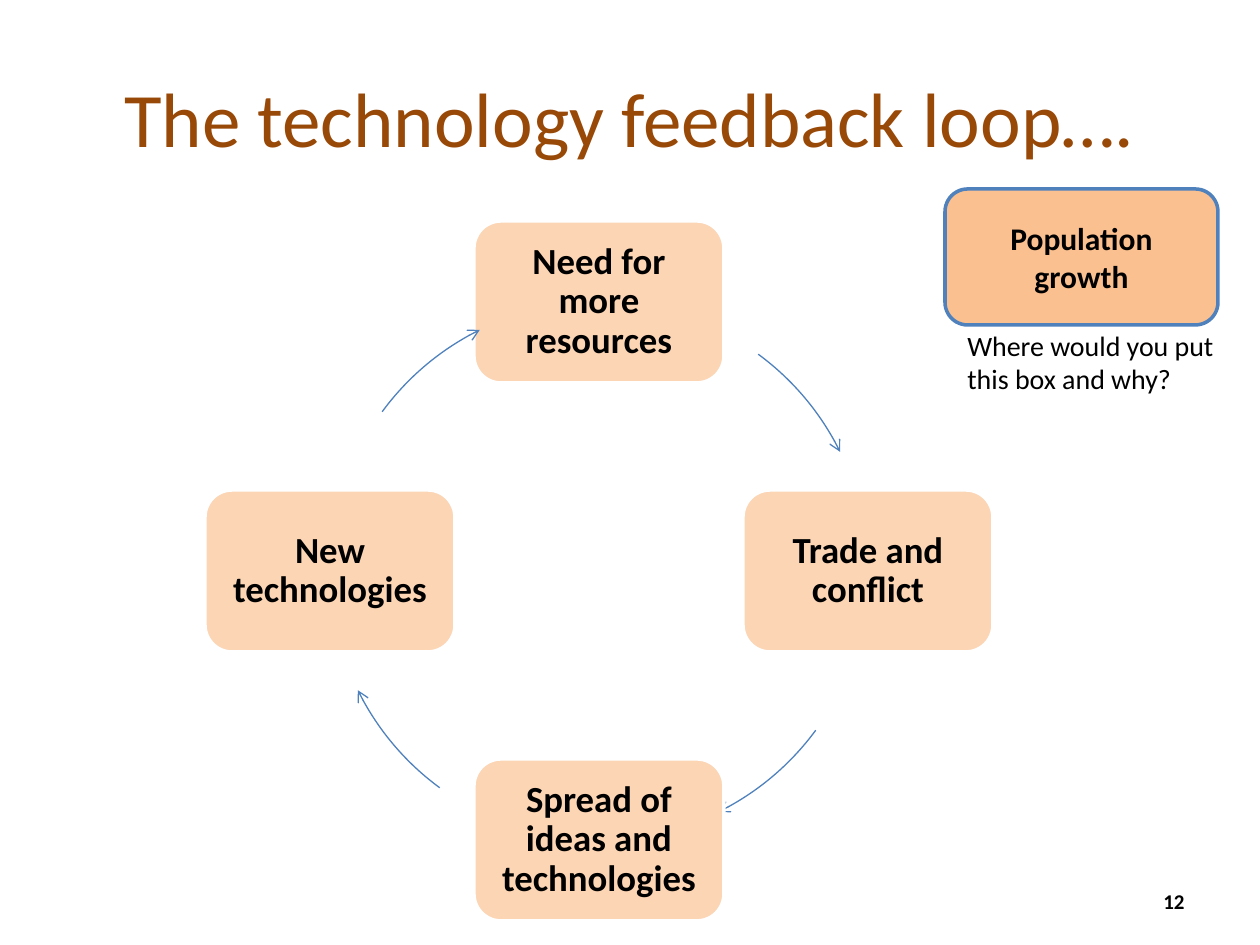
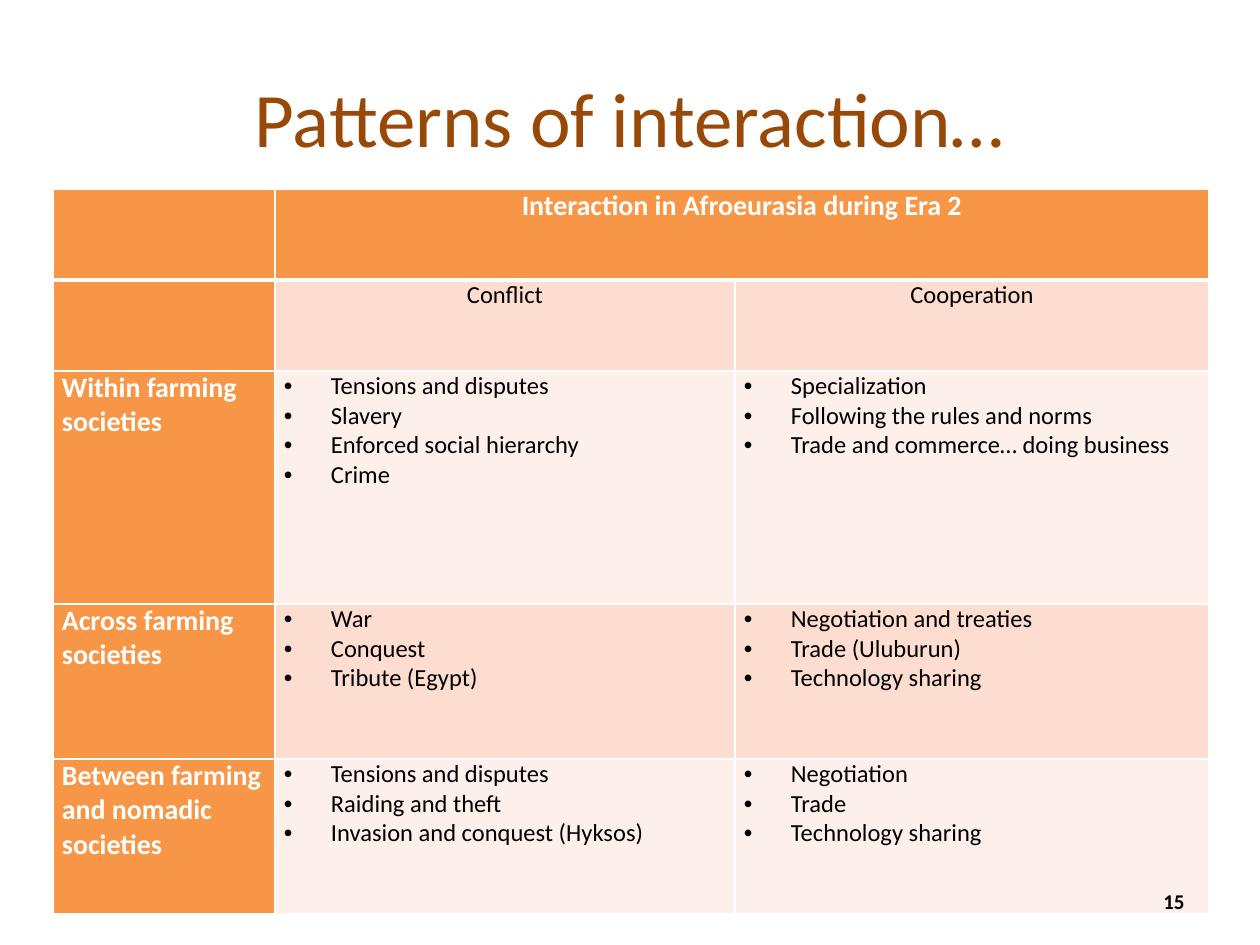
from dataclasses import dataclass

from lxml.etree import SubElement
from pptx import Presentation
from pptx.dml.color import RGBColor
from pptx.enum.shapes import MSO_SHAPE
from pptx.enum.text import MSO_ANCHOR, PP_ALIGN
from pptx.oxml.ns import qn
from pptx.util import Emu, Pt

SCALE = 914400 / 126  # EMU in one px


@dataclass(frozen=True)
class Theme:
    font: str = "Calibri"
    title: str = "984807"
    ink: str = "000000"
    white: str = "FFFFFF"
    blue: str = "4F81BD"
    peach: str = "FCD5B5"
    amber: str = "FAC090"
    head: str = "F79646"
    bands: tuple = ("FCDDCF", "FDEFE9")
    huge: int = 44
    step: int = 21
    large: int = 18
    label: int = 16
    body: int = 14
    small: int = 12


T = Theme()
LEFT, MID, RIGHT = PP_ALIGN.LEFT, PP_ALIGN.CENTER, PP_ALIGN.RIGHT


def px(n):
    return Emu(round(n * SCALE))


def span(box):
    return [px(n) for n in box]


def apply(item, form):
    for name, value in form.items():
        setattr(item, name, value)


# Text

def dot(par):
    """Give a paragraph a bullet with a hanging indent."""
    props = par._p.get_or_add_pPr()
    props.set("marL", str(px(47)))
    props.set("indent", str(-px(47)))
    SubElement(props, qn("a:buFont"), typeface="Arial")
    SubElement(props, qn("a:buChar"), char="•")


def write(frame, lines, size, color=T.ink, bold=False, align=LEFT,
          bullet=False, space=None):
    for i, line in enumerate(lines):
        par = frame.add_paragraph() if i else frame.paragraphs[0]
        apply(par, {"alignment": align, "line_spacing": space})
        if bullet:
            dot(par)
        run = par.add_run()
        run.text = line
        apply(run.font, {"name": T.font, "size": Pt(size), "bold": bold})
        run.font.color.rgb = RGBColor.from_string(color)


def note(slide, box, line, size, anchor=MSO_ANCHOR.MIDDLE, **form):
    frame = slide.shapes.add_textbox(*span(box)).text_frame
    apply(frame, {"word_wrap": True, "vertical_anchor": anchor})
    write(frame, [line], size, **form)


def frame_slide(deck, title):
    slide = deck.slides.add_slide(deck.slide_layouts[6])
    note(slide, (63, 38, 1134, 157), title, T.huge, color=T.title, align=MID)
    return slide


def number(slide, value):
    note(slide, (903, 876, 294, 50), value, T.small, bold=True, align=RIGHT)


# Feedback loop

def card(slide, box, line, size, fill, edge, pad=13, space=None):
    shape = slide.shapes.add_shape(MSO_SHAPE.ROUNDED_RECTANGLE, *span(box))
    shape.shadow.inherit = False
    shape.fill.solid()
    shape.fill.fore_color.rgb = RGBColor.from_string(fill)
    shape.line.color.rgb = RGBColor.from_string(edge)
    shape.line.width = Pt(2)
    frame = shape.text_frame
    apply(frame, {"word_wrap": True, "vertical_anchor": MSO_ANCHOR.MIDDLE,
                  "margin_left": px(pad), "margin_right": px(pad)})
    write(frame, [line], size, bold=True, align=MID, space=space)


def arc(slide, box, start, end):
    """Draw a clockwise arrow; angles are in degrees from the right."""
    shape = slide.shapes.add_shape(MSO_SHAPE.ARC, *span(box))
    shape.shadow.inherit = False
    shape.fill.background()
    for i, angle in enumerate((start, end)):
        shape.adjustments[i] = angle % 360 * 0.6
    shape.line.color.rgb = RGBColor.from_string(T.blue)
    shape.line.width = Pt(0.75)
    SubElement(shape.line._get_or_add_ln(), qn("a:tailEnd"), type="arrow")


def cycle(slide, box, steps):
    """Set four steps on the sides of a square box, clockwise from the top."""
    left, top, size = box
    half, wide, high = size / 2, 250, 162
    sides = ((0, -1), (1, 0), (0, 1), (-1, 0))
    for i, (step, (dx, dy)) in enumerate(zip(steps, sides)):
        x = left + half * (1 + dx) - wide / 2
        y = top + half * (1 + dy) - high / 2
        card(slide, (x, y, wide, high), step, T.step, T.peach, T.white,
             pad=11, space=0.9)
        turn = 270 + 90 * i
        arc(slide, (left, top, size, size), turn + 36.3, turn + 63.7)


def prompt(slide, box):
    left, top, wide, high = box
    card(slide, box, "Population growth", T.large, T.amber, T.blue)
    note(slide, (left + 10, top + high - 3, wide, 81),
         "Where would you put this box and why?", T.label, MSO_ANCHOR.TOP)


def loop_slide(deck):
    slide = frame_slide(deck, "The technology feedback loop….")
    cycle(slide, (330, 302, 538),
          ("Need for more resources", "Trade and conflict",
           "Spread of ideas and technologies", "New technologies"))
    prompt(slide, (945, 189, 273, 136))
    number(slide, "12")


# Table of patterns

COLS = (222, 460, 474)
ROWS = (91, 91, 233, 155, 155)
GRID = (
    ([], ["Interaction in Afroeurasia during Era 2"], []),
    ([], ["Conflict"], ["Cooperation"]),
    (["Within farming societies"],
     ["Tensions and disputes", "Slavery", "Enforced social hierarchy", "Crime"],
     ["Specialization", "Following the rules and norms",
      "Trade and commerce… doing business"]),
    (["Across farming societies"],
     ["War", "Conquest", "Tribute (Egypt)"],
     ["Negotiation and treaties", "Trade (Uluburun)", "Technology sharing"]),
    (["Between farming and nomadic", "societies"],
     ["Tensions and disputes", "Raiding and theft",
      "Invasion and conquest (Hyksos)"],
     ["Negotiation", "Trade", "Technology sharing"]),
)


def rule(cell, widths):
    """Add white borders, widths in points by side."""
    props = cell._tc.get_or_add_tcPr()
    for side, width in widths.items():
        line = SubElement(props, qn(f"a:ln{side}"), w=str(Pt(width)))
        fill = SubElement(line, qn("a:solidFill"))
        SubElement(fill, qn("a:srgbClr"), val=T.white)


def fill_cell(cell, lines, row, col):
    head = row == 0 or col == 0
    rule(cell, {"L": 1, "R": 1, "T": 3 if row == 1 else 1,
                "B": 3 if row == 0 else 1})
    cell.fill.solid()
    tint = T.head if head else T.bands[(row - 1) % 2]
    cell.fill.fore_color.rgb = RGBColor.from_string(tint)
    apply(cell, {"margin_left": px(9), "margin_right": px(9),
                 "margin_top": 0, "margin_bottom": 0})
    write(cell.text_frame, lines, T.label if head else T.body,
          color=T.white if head else T.ink, bold=head,
          align=MID if row < 2 else LEFT, bullet=not head and row > 1)


def grid(slide, left, top):
    box = (left, top, sum(COLS), sum(ROWS))
    table = slide.shapes.add_table(len(ROWS), len(COLS), *span(box)).table
    apply(table, {"first_row": False, "horz_banding": False})
    for col, wide in zip(table.columns, COLS):
        col.width = px(wide)
    for row, high in zip(table.rows, ROWS):
        row.height = px(high)
    for r, line in enumerate(GRID):
        for c, texts in enumerate(line):
            fill_cell(table.cell(r, c), texts, r, c)
    table.cell(0, 1).merge(table.cell(0, 2))


def table_slide(deck):
    slide = frame_slide(deck, "Patterns of interaction…")
    grid(slide, 53, 189)
    number(slide, "15")


def main():
    deck = Presentation()
    apply(deck, {"slide_width": px(1260), "slide_height": px(945)})
    loop_slide(deck)
    table_slide(deck)
    deck.save("out.pptx")


if __name__ == "__main__":
    main()
